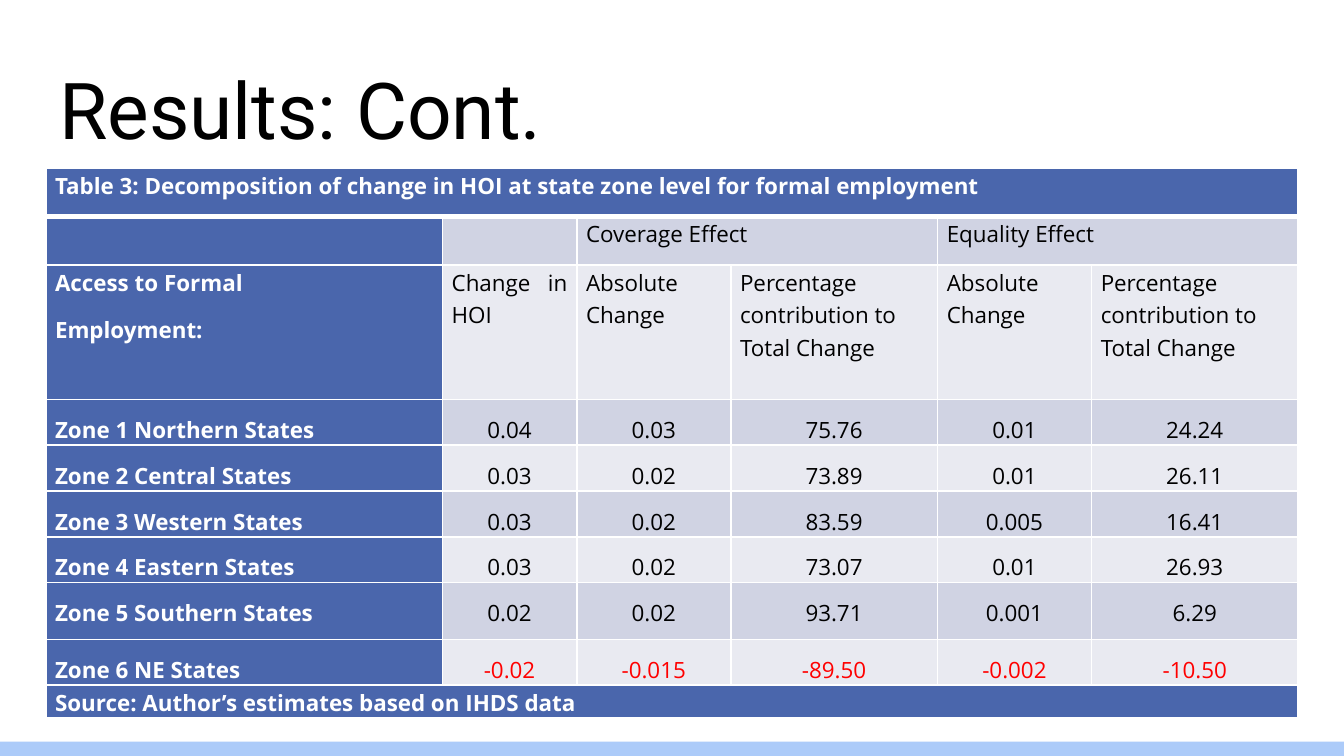
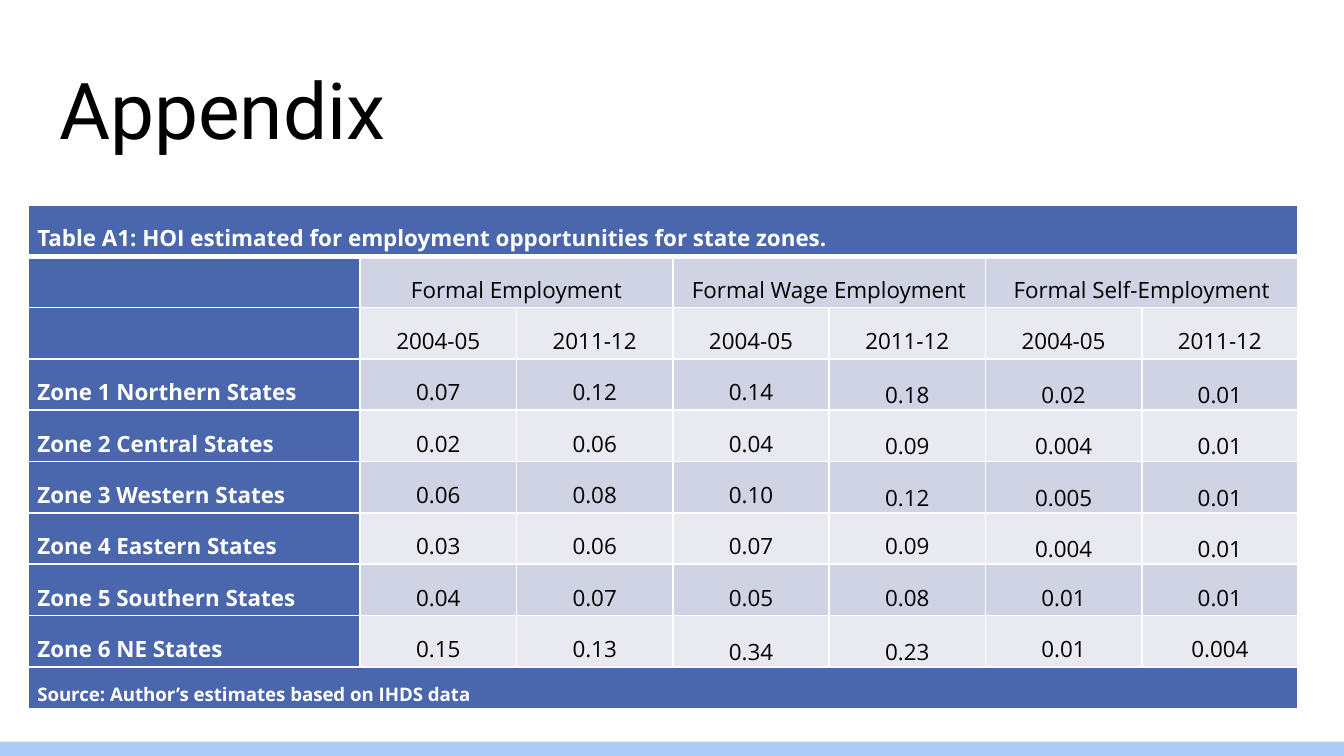
import lxml.etree
import pptx
import pptx.dml.color
import pptx.enum.shapes
import pptx.enum.text
import pptx.oxml.ns
import pptx.util

Pt = pptx.util.Pt
ALIGN = pptx.enum.text.PP_ALIGN
ANCHOR = pptx.enum.text.MSO_ANCHOR
qn = pptx.oxml.ns.qn

COLOURS = {
    "white": "FFFFFF",
    "black": "000000",
    "negative": "FF0000",
    "header": "4A66AC",
    "dark_row": "D0D3E3",
    "light_row": "E9EAF1",
    "band": "ACCBF9",
}
TITLE_FONT = "Roboto"
TABLE_FONT = "Open Sans"
SLIDE_WIDTH, SLIDE_HEIGHT = 720, 405
TITLE_BOX = (24.5, 25, 671, 65.5)
BAND_BOX = (0, 397.4, SLIDE_WIDTH, 7.6)
CELL_INSET = 5

ZONES = [
    "Zone 1 Northern States",
    "Zone 2 Central States",
    "Zone 3 Western States",
    "Zone 4 Eastern States",
    "Zone 5 Southern States",
    "Zone 6 NE States",
]
SOURCE = "Source: Author’s estimates based on IHDS data"

DECOMPOSITION = [
    ["0.04", "0.03", "75.76", "0.01", "24.24"],
    ["0.03", "0.02", "73.89", "0.01", "26.11"],
    ["0.03", "0.02", "83.59", "0.005", "16.41"],
    ["0.03", "0.02", "73.07", "0.01", "26.93"],
    ["0.02", "0.02", "93.71", "0.001", "6.29"],
    ["-0.02", "-0.015", "-89.50", "-0.002", "-10.50"],
]
ESTIMATES = [
    ["0.07", "0.12", "0.14", "0.18", "0.02", "0.01"],
    ["0.02", "0.06", "0.04", "0.09", "0.004", "0.01"],
    ["0.06", "0.08", "0.10", "0.12", "0.005", "0.01"],
    ["0.03", "0.06", "0.07", "0.09", "0.004", "0.01"],
    ["0.04", "0.07", "0.05", "0.08", "0.01", "0.01"],
    ["0.15", "0.13", "0.34", "0.23", "0.01", "0.004"],
]

SLIDES = [
    {
        "title": "Results: Cont.",
        "caption": "Table 3: Decomposition of change in HOI at state zone level for formal employment",
        "headings": [
            ["", "", "Coverage Effect", None, "Equality Effect", None],
            ["Access to Formal\nEmployment:", "Change in HOI"]
            + ["Absolute Change", "Percentage contribution to Total Change"] * 2,
        ],
        "values": DECOMPOSITION,
        "corner": (24.5, 90),
        "columns": [212.5, 72] + [82.5, 110.75] * 2,
        "rows": [26, 26, 72] + [24.5] * 4 + [30.5, 24.5, 17.5],
        "heading_aligns": [ALIGN.JUSTIFY] * 3 + [ALIGN.LEFT] * 3,
        "heading_spacing": 1.07,
        "anchor": ANCHOR.TOP,
        "source_anchor": ANCHOR.BOTTOM,
        "source_size": 12,
        "bottom_cells": set(),
    },
    {
        "title": "Appendix",
        "caption": "Table A1: HOI estimated for employment opportunities for state zones.",
        "headings": [
            ["", "Formal Employment", None, "Formal Wage Employment", None,
             "Formal Self-Employment", None],
            [""] + ["2004-05", "2011-12"] * 3,
        ],
        "values": ESTIMATES,
        "corner": (15, 109.75),
        "columns": [178] + [83.75] * 6,
        "rows": [27.5] * 9 + [22.75],
        "heading_aligns": [ALIGN.JUSTIFY] + [ALIGN.CENTER] * 6,
        "heading_spacing": 1.5,
        "anchor": ANCHOR.MIDDLE,
        "source_anchor": ANCHOR.MIDDLE,
        "source_size": 10,
        "bottom_cells": {(row, column) for row in (3, 4, 5) for column in (4, 5, 6)}
        | {(6, 5), (6, 6), (8, 3), (8, 4)},
    },
]


def colour(name):
    return pptx.dml.color.RGBColor.from_string(COLOURS[name])


def add_span(para, text, font, size, name, bold=False):
    span = para.add_run()
    span.text = text
    span.font.name = font
    span.font.size = Pt(size)
    span.font.bold = bold
    span.font.color.rgb = colour(name)


def add_band(page):
    band = page.shapes.add_shape(
        pptx.enum.shapes.MSO_SHAPE.RECTANGLE, *map(Pt, BAND_BOX))
    band.shadow.inherit = False
    band.fill.solid()
    band.fill.fore_color.rgb = colour("band")
    band.line.fill.background()


def add_title(page, text):
    title = page.shapes.title
    title.left, title.top, title.width, title.height = map(Pt, TITLE_BOX)
    frame = title.text_frame
    frame.word_wrap = True
    frame.auto_size = pptx.enum.text.MSO_AUTO_SIZE.NONE
    frame.vertical_anchor = ANCHOR.BOTTOM
    frame.margin_left = frame.margin_right = Pt(7.2)
    frame.margin_top = frame.margin_bottom = Pt(7.2)
    para = frame.paragraphs[0]
    para.alignment = ALIGN.LEFT
    add_span(para, text, TITLE_FONT, 42, "black")


def add_borders(cell, widths):
    properties = cell._tc.get_or_add_tcPr()
    for index, (side, width) in enumerate(widths.items()):
        line = lxml.etree.Element(qn("a:ln" + side), w=str(Pt(width)))
        fill = lxml.etree.SubElement(line, qn("a:solidFill"))
        lxml.etree.SubElement(fill, qn("a:srgbClr"), val=COLOURS["white"])
        properties.insert(index, line)


def fill_cell(cell, text, fill, anchor, align, spacing, size):
    cell.margin_left = cell.margin_right = Pt(CELL_INSET)
    cell.margin_top = cell.margin_bottom = Pt(0)
    cell.vertical_anchor = anchor
    cell.fill.solid()
    cell.fill.fore_color.rgb = colour(fill)
    frame = cell.text_frame
    if not text:
        lxml.etree.SubElement(
            frame.paragraphs[0]._p, qn("a:endParaRPr"), sz=str(size * 100))
        return
    on_header = fill == "header"
    name = "white" if on_header else "negative" if text.startswith("-") else "black"
    for index, line in enumerate(text.split("\n")):
        para = frame.add_paragraph() if index else frame.paragraphs[0]
        para.alignment = align
        para.line_spacing = spacing
        para.space_after = Pt(8)
        add_span(para, line, TABLE_FONT, size, name, on_header)


def add_zone_table(page, content):
    columns, heights = content["columns"], content["rows"]
    blanks = [None] * (len(columns) - 1)
    rows = [[content["caption"]] + blanks, *content["headings"]]
    rows += [[zone, *values] for zone, values in zip(ZONES, content["values"])]
    rows.append([SOURCE] + blanks)
    last = len(rows) - 1

    shape = page.shapes.add_table(
        len(rows), len(columns), *map(Pt, content["corner"]),
        Pt(sum(columns)), Pt(sum(heights)))
    table = shape.table
    table.first_row = table.horz_banding = False
    for column, width in zip(table.columns, columns):
        column.width = Pt(width)

    for r, texts in enumerate(rows):
        table.rows[r].height = Pt(heights[r])
        for c, text in enumerate(texts):
            cell = table.cell(r, c)
            is_zone = 3 <= r < last
            if c == 0 or r in (0, last):
                fill = "header"
            else:
                fill = "dark_row" if r % 2 else "light_row"
            if r == last:
                anchor = content["source_anchor"]
            elif (r, c) in content["bottom_cells"]:
                anchor = ANCHOR.BOTTOM
            else:
                anchor = content["anchor"]
            if is_zone and c:
                align = ALIGN.CENTER
            else:
                align = content["heading_aligns"][c]
            spacing = 1.5 if is_zone else content["heading_spacing"]
            size = content["source_size"] if r == last else 12
            fill_cell(cell, text, fill, anchor, align, spacing, size)
            add_borders(cell, {"L": 1, "R": 1, "T": 3 if r == 1 else 1,
                               "B": 3 if r == 0 else 1})

        for c, text in enumerate(texts):
            end = c
            while end + 1 < len(texts) and texts[end + 1] is None:
                end += 1
            if text is not None and end > c:
                table.cell(r, c).merge(table.cell(r, end))


def main():
    deck = pptx.Presentation()
    deck.slide_width, deck.slide_height = Pt(SLIDE_WIDTH), Pt(SLIDE_HEIGHT)
    for content in SLIDES:
        page = deck.slides.add_slide(deck.slide_layouts[5])
        add_band(page)
        add_title(page, content["title"])
        add_zone_table(page, content)
    deck.save("out.pptx")


if __name__ == "__main__":
    main()
